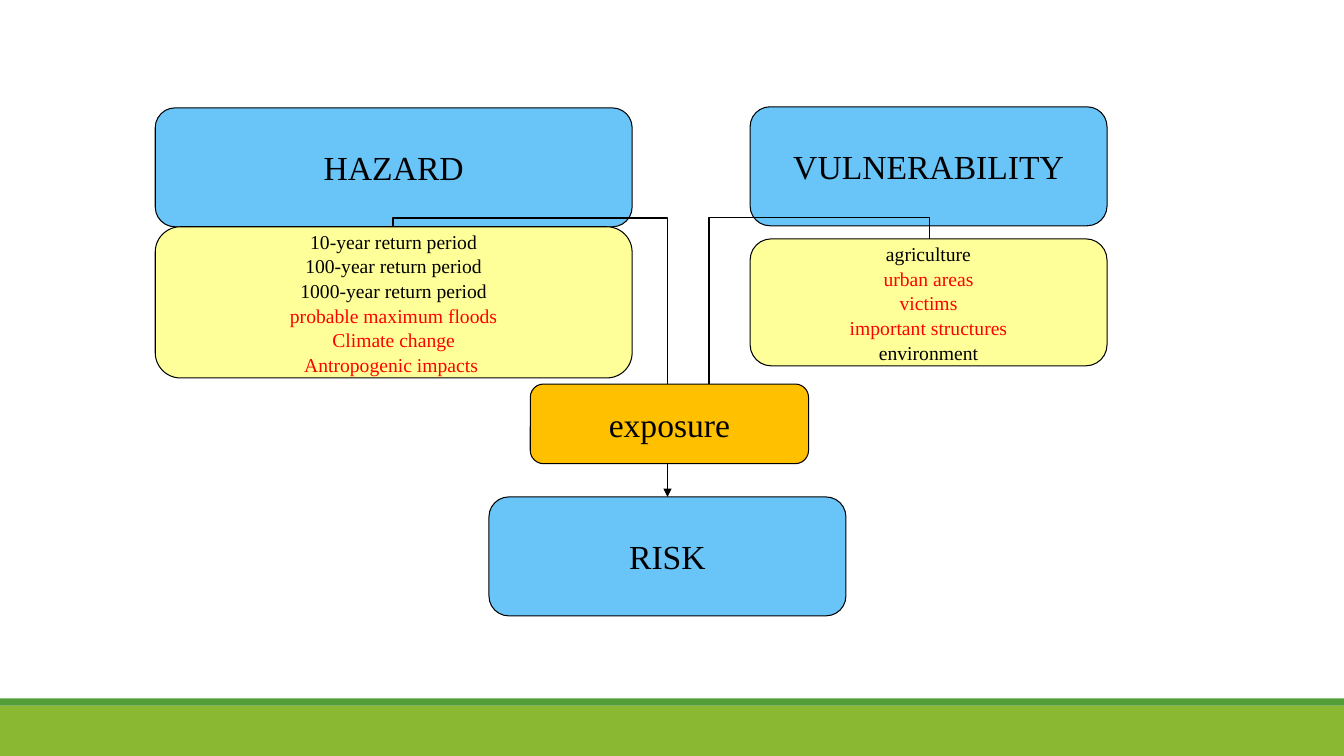
from lxml import etree
from pptx import Presentation
from pptx.dml.color import RGBColor
from pptx.enum.shapes import MSO_CONNECTOR as Connector, MSO_SHAPE as Shape
from pptx.enum.text import MSO_ANCHOR as Anchor, PP_ALIGN as Align
from pptx.oxml.ns import qn
from pptx.util import Inches, Pt

COLORS = {"black": "000000", "red": "FF0000", "blue": "69C4F7", "yellow": "FFFF99",
          "orange": "FFC000", "green": "8AB833", "dark green": "549E39"}
FONT = "Times New Roman"
WIDTH, HEIGHT = 13.33, 7.5

# Left, top, width, height in inches
BANDS = [("green", (0, 7, WIDTH, 0.5)), ("dark green", (0, 6.93, WIDTH, 0.07))]
MAIN_BOXES = [
    ("HAZARD", "blue", (1.54, 1.07, 4.73, 1.18)),
    ("VULNERABILITY", "blue", (7.44, 1.06, 3.54, 1.18)),
    ("RISK", "blue", (4.85, 4.93, 3.54, 1.18)),
]
EXPOSURE_BOX = ("exposure", "orange", (5.26, 3.81, 2.76, 0.79))
DETAIL_BOXES = [
    ([("10-year return period", "black"), ("100-year return period", "black"),
      ("1000-year return period", "black"), ("probable maximum floods", "red"),
      ("Climate change", "red"), ("Antropogenic impacts ", "red")],
     (1.54, 2.25, 4.73, 1.5)),
    ([("agriculture", "black"), ("urban areas", "red"), ("victims", "red"),
      ("important structures", "red"), ("environment", "black")],
     (7.44, 2.37, 3.54, 1.26)),
]
# Start, end, preset, bends as shares of the run, arrowhead
LINKS = [
    ((3.9, 2.41), (6.62, 4.93), "bentConnector3", [-0.099], True),
    ((9.22, 2.41), (6.62, 3.98), "bentConnector4", [-0.16, 0.841], False),
]


def rgb(name):
    return RGBColor.from_string(COLORS[name])


def add_box(slide, preset, fill, frame, outlined=True):
    shape = slide.shapes.add_shape(preset, *map(Inches, frame))
    shape.shadow.inherit = False
    shape.fill.solid()
    shape.fill.fore_color.rgb = rgb(fill)
    if outlined:
        shape.line.color.rgb = rgb("black")
        shape.line.width = Pt(0.75)
    else:
        shape.line.fill.background()
    return shape


def write_lines(shape, lines, size, spacing):
    frame = shape.text_frame
    frame.word_wrap = False
    frame.vertical_anchor = Anchor.MIDDLE
    for index, (text, color) in enumerate(lines):
        paragraph = frame.paragraphs[0] if index == 0 else frame.add_paragraph()
        paragraph.alignment = Align.CENTER
        paragraph.line_spacing = spacing
        run = paragraph.add_run()
        run.text = text
        for name, value in {"name": FONT, "size": Pt(size)}.items():
            setattr(run.font, name, value)
        run.font.color.rgb = rgb(color)


def add_title_box(slide, text, fill, frame):
    box = add_box(slide, Shape.FLOWCHART_ALTERNATE_PROCESS, fill, frame)
    write_lines(box, [(text, "black")], 24, 1.0)


def add_link(slide, start, end, preset, bends, arrow):
    """Add a bent connector that leaves its start upwards (turned by 270 degrees)."""
    middle_x, middle_y = (start[0] + end[0]) / 2, (start[1] + end[1]) / 2
    unturned = [Inches(value) for x, y in (start, end)
                for value in (middle_x - (y - middle_y), middle_y + (x - middle_x))]
    connector = slide.shapes.add_connector(Connector.ELBOW, *unturned)
    connector.line.color.rgb = rgb("black")
    connector.line.width = Pt(1.25)
    properties = connector._element.spPr
    properties.find(qn("a:xfrm")).set("rot", str(270 * 60000))
    geometry = properties.find(qn("a:prstGeom"))
    geometry.set("prst", preset)
    guides = geometry.find(qn("a:avLst"))
    for number, bend in enumerate(bends, 1):
        etree.SubElement(guides, qn("a:gd"), name=f"adj{number}",
                         fmla=f"val {round(bend * 100000)}")
    if arrow:
        etree.SubElement(properties.find(qn("a:ln")), qn("a:tailEnd"), type="triangle")
    etree.SubElement(properties, qn("a:effectLst"))


def main():
    presentation = Presentation()
    presentation.slide_width, presentation.slide_height = Inches(WIDTH), Inches(HEIGHT)
    slide = presentation.slides.add_slide(presentation.slide_layouts[6])
    for fill, frame in BANDS:
        add_box(slide, Shape.RECTANGLE, fill, frame, outlined=False)
    for box in MAIN_BOXES:
        add_title_box(slide, *box)
    for link in LINKS:
        add_link(slide, *link)
    for lines, frame in DETAIL_BOXES:
        box = add_box(slide, Shape.ROUNDED_RECTANGLE, "yellow", frame)
        write_lines(box, lines, 14, 1.05)
    add_title_box(slide, *EXPOSURE_BOX)
    presentation.save("out.pptx")


if __name__ == "__main__":
    main()
